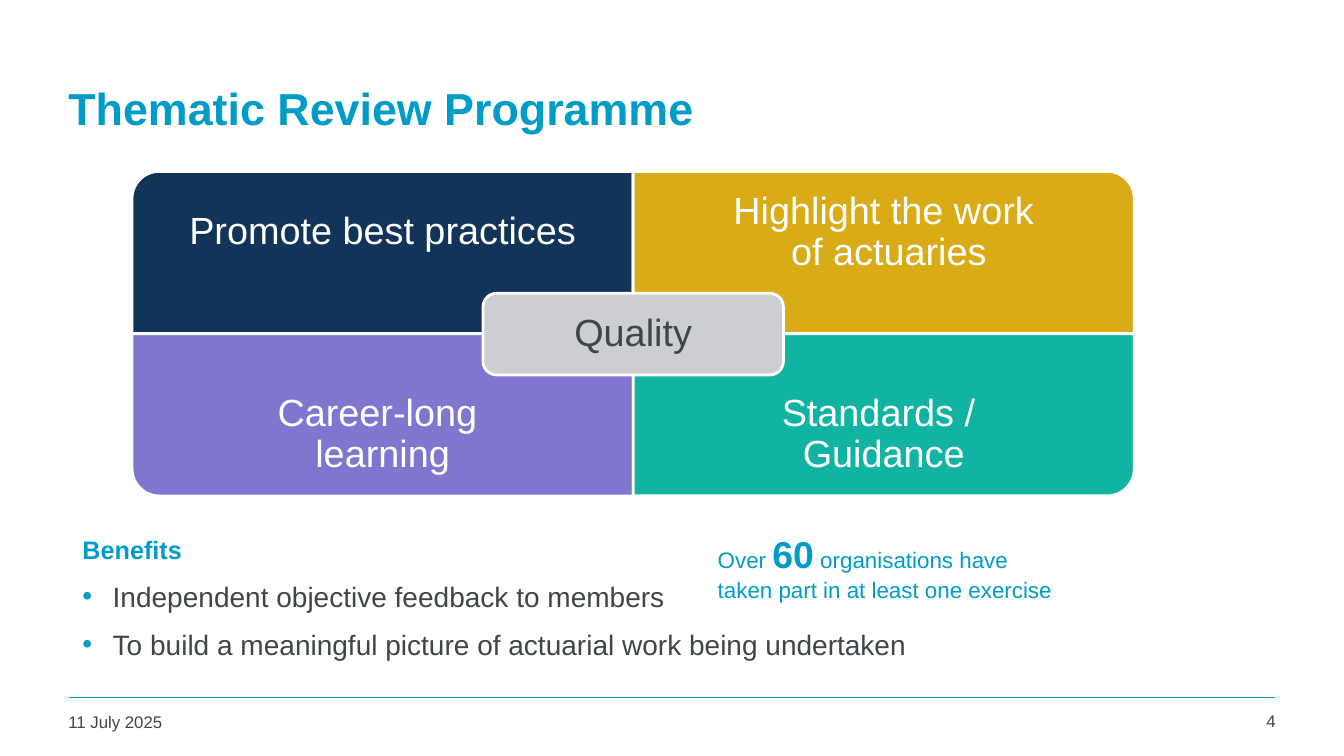
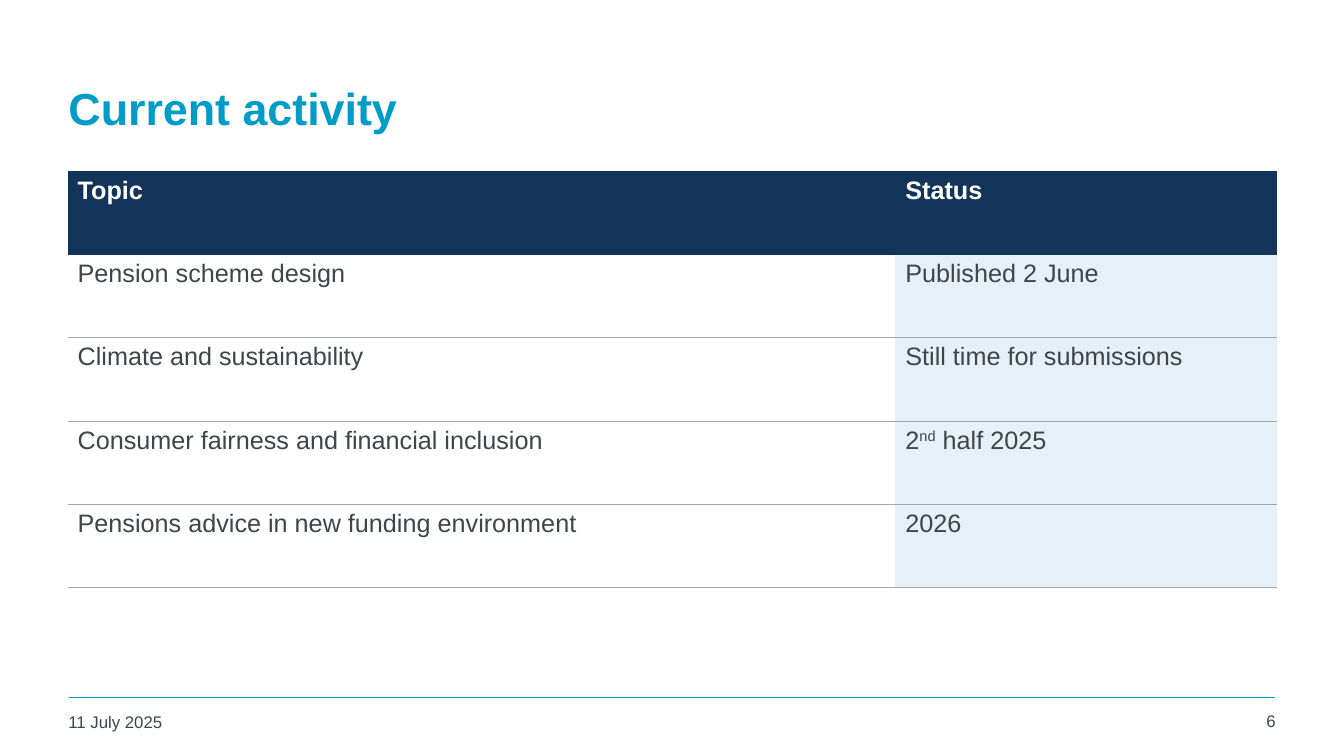
"""Build two slides on the thematic review programme."""
from lxml.etree import SubElement
from pptx import Presentation
from pptx.dml.color import RGBColor
from pptx.enum.shapes import MSO_CONNECTOR, MSO_SHAPE
from pptx.enum.text import MSO_ANCHOR, PP_ALIGN
from pptx.oxml.ns import qn
from pptx.util import Inches, Pt

FONT = "Arial"
BLUE, NAVY, GOLD, PURPLE, TEAL = "009CC8", "113458", "D9AB16", "8076CF", "11B3A2"
DARK, SILVER, RULE, PALE, WHITE = "3F4548", "CCCED1", "A6A6A6", "E5F0F9", "FFFFFF"


def color(value):
    return RGBColor.from_string(value)


def add_text(paragraph, text, size, text_color, bold=False):
    for index, line in enumerate(text.split("\n")):
        if index:
            paragraph.add_line_break()
        run = paragraph.add_run()
        run.text = line
        run.font.name = FONT
        run.font.size = Pt(size)
        run.font.bold = bold
        run.font.color.rgb = color(text_color)
    return run


presentation = Presentation()
presentation.slide_width = Inches(13.33)
presentation.slide_height = Inches(7.5)

slides = []
for title, number in (("Thematic Review Programme", "4"), ("Current activity", "6")):
    slide = presentation.slides.add_slide(presentation.slide_layouts[6])
    slides.append(slide)
    line = slide.shapes.add_connector(
        MSO_CONNECTOR.STRAIGHT, Inches(0.68), Inches(6.92), Inches(12.65), Inches(6.92))
    line.line.color.rgb = color(BLUE)
    line.line.width = Pt(1)
    SubElement(line._element.spPr, qn("a:effectLst"))
    for text, box, size, text_color, bold, alignment, anchor in (
        (title, (0.58, 0.44, 12.09, 1.25), 32, BLUE, True, PP_ALIGN.LEFT, MSO_ANCHOR.MIDDLE),
        ("11 July 2025", (0.58, 7.01, 2.94, 0.36), 12, DARK, False, PP_ALIGN.LEFT, MSO_ANCHOR.TOP),
        (number, (11.81, 7, 0.94, 0.37), 12, DARK, False, PP_ALIGN.RIGHT, MSO_ANCHOR.TOP),
    ):
        frame = slide.shapes.add_textbox(*map(Inches, box)).text_frame
        frame.word_wrap = True
        frame.vertical_anchor = anchor
        frame.paragraphs[0].alignment = alignment
        add_text(frame.paragraphs[0], text, size, text_color, bold)

programme, activity = slides

LEFT, TOP, WIDTH, HEIGHT, LABEL_HEIGHT = 1.31, 1.7, 4.97, 1.61, 1.21
QUADRANTS = (
    ("Promote best practices", NAVY, 0, 0, 270),
    ("Highlight the work\n of actuaries", GOLD, 1, 0, 0),
    ("Career-long \nlearning", PURPLE, 0, 1, 180),
    ("Standards / \nGuidance", TEAL, 1, 1, 90),
)
panels = []
labels = []
for text, fill, column, row, rotation in QUADRANTS:
    left, top = LEFT + column * WIDTH, TOP + row * HEIGHT
    width, height = (HEIGHT, WIDTH) if rotation % 180 else (WIDTH, HEIGHT)
    panels.append((MSO_SHAPE.ROUND_1_RECTANGLE, left + (WIDTH - width) / 2,
                   top + (HEIGHT - height) / 2, width, height, rotation, fill))
    label_top = top + row * (HEIGHT - LABEL_HEIGHT)
    labels.append((text, left, label_top, WIDTH, LABEL_HEIGHT, 0.21, WHITE))
panels.append((MSO_SHAPE.ROUNDED_RECTANGLE, 4.79, 2.91, 2.98, 0.81, 0, SILVER))
labels.append(("Quality", 4.83, 2.95, 2.9, 0.73, 0.11, DARK))

for kind, left, top, width, height, rotation, fill in panels:
    shape = programme.shapes.add_shape(
        kind, Inches(left), Inches(top), Inches(width), Inches(height))
    shape.rotation = rotation
    shape.shadow.inherit = False
    shape.fill.solid()
    shape.fill.fore_color.rgb = color(fill)
    shape.line.color.rgb = color(WHITE)
    shape.line.width = Pt(2)

for text, left, top, width, height, inset, text_color in labels:
    frame = programme.shapes.add_textbox(
        Inches(left), Inches(top), Inches(width), Inches(height)).text_frame
    frame.word_wrap = True
    frame.vertical_anchor = MSO_ANCHOR.MIDDLE
    frame.margin_left = frame.margin_right = Inches(inset)
    frame.margin_top = frame.margin_bottom = Inches(inset)
    paragraph = frame.paragraphs[0]
    paragraph.alignment = PP_ALIGN.CENTER
    paragraph.line_spacing = 0.9
    add_text(paragraph, text, 27, text_color)

benefits = programme.shapes.add_textbox(
    Inches(0.72), Inches(5.25), Inches(9.93), Inches(1.73)).text_frame
benefits.word_wrap = True
add_text(benefits.paragraphs[0], "Benefits", 18, BLUE, True)
for text in ("Independent objective feedback to members",
             "To build a meaningful picture of actuarial work being undertaken"):
    paragraph = benefits.add_paragraph()
    properties = paragraph._p.get_or_add_pPr()
    properties.set("marL", str(Inches(0.3)))
    properties.set("indent", str(-Inches(0.3)))
    SubElement(SubElement(properties, qn("a:buClr")), qn("a:srgbClr"), val=BLUE)
    SubElement(properties, qn("a:buFont"), typeface=FONT)
    SubElement(properties, qn("a:buChar"), char="•")
    paragraph.space_before = Pt(10.5)
    add_text(paragraph, text, 20, DARK)

callout = programme.shapes.add_textbox(
    Inches(7.02), Inches(5.22), Inches(3.59), Inches(0.82)).text_frame
callout.word_wrap = True
for text, size, bold in (("Over ", 16, False), ("60", 26.7, True),
                         (" organisations have taken part in at least one exercise", 16, False)):
    add_text(callout.paragraphs[0], text, size, BLUE, bold)

ROWS = (
    (("Topic",), ("Status",)),
    (("Pension scheme design",), ("Published 2 June",)),
    (("Climate and sustainability",), ("Still time for submissions",)),
    (("Consumer fairness and financial inclusion",), ("2", "nd", " half 2025")),
    (("Pensions advice in new funding environment",), ("2026",)),
)
table = activity.shapes.add_table(
    len(ROWS), 2, Inches(0.67), Inches(1.7), Inches(12), Inches(4.13)).table
table.first_row = True
table.horz_banding = False
for column, width in zip(table.columns, (8.21, 3.79)):
    column.width = Inches(width)
for row_index, row in enumerate(ROWS):
    for column_index, texts in enumerate(row):
        cell = table.cell(row_index, column_index)
        properties = cell._tc.get_or_add_tcPr()
        ruled = {"a:lnT": row_index > 1, "a:lnB": row_index > 0}
        for side in ("a:lnL", "a:lnR", "a:lnT", "a:lnB"):
            border = SubElement(properties, qn(side), w=str(Pt(1)))
            if ruled.get(side):
                fill = SubElement(border, qn("a:solidFill"))
                SubElement(fill, qn("a:srgbClr"), val=RULE)
            else:
                SubElement(border, qn("a:noFill"))
        header = row_index == 0
        cell.fill.solid()
        cell.fill.fore_color.rgb = color(NAVY if header else (WHITE, PALE)[column_index])
        for text in texts:
            run = add_text(cell.text_frame.paragraphs[0], text, 18,
                           WHITE if header else DARK, header)
            if text == "nd":
                run._r.get_or_add_rPr().set("baseline", "30000")

presentation.save("out.pptx")
